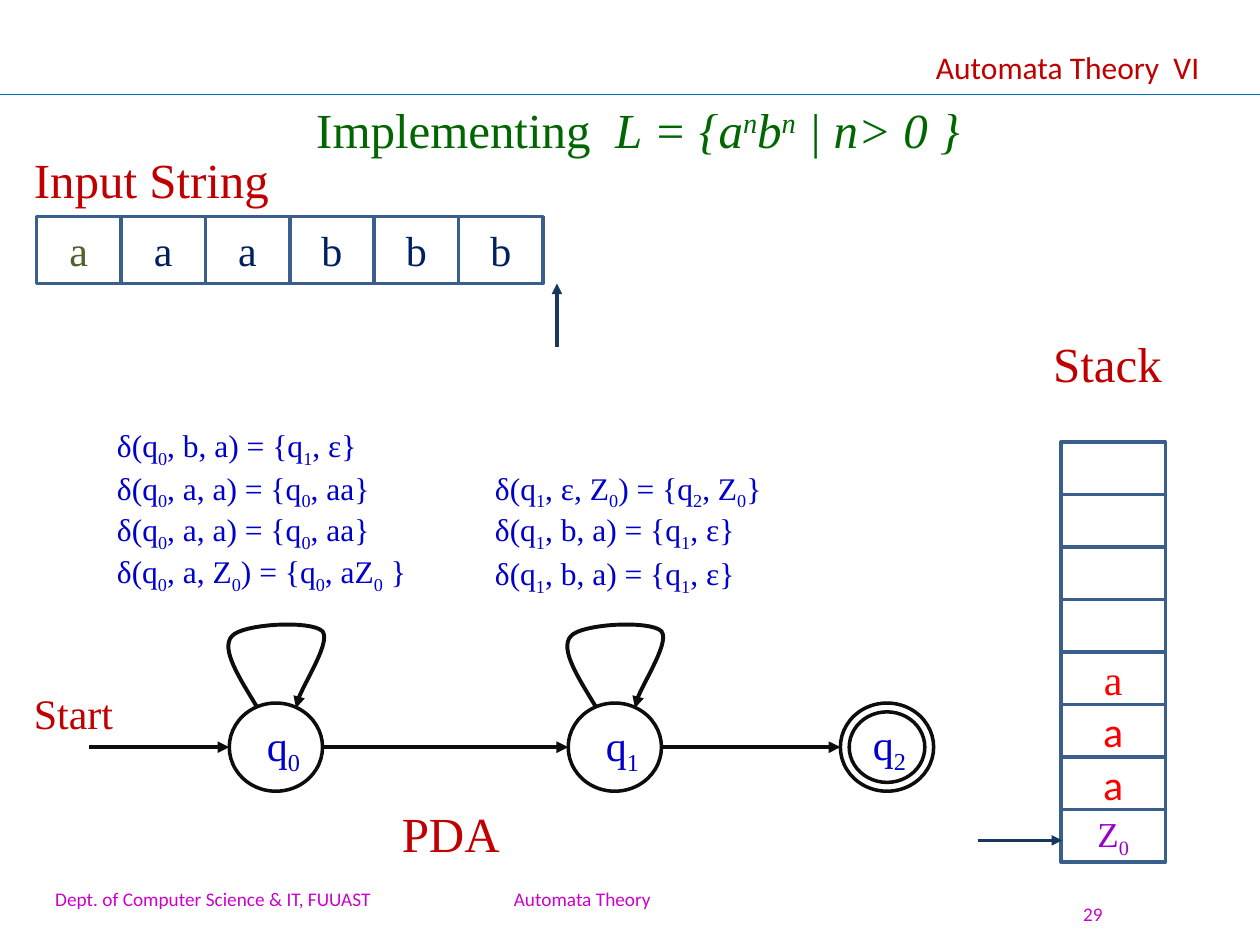
from pptx import Presentation
from pptx.dml.color import RGBColor
from pptx.enum.shapes import MSO_CONNECTOR, MSO_SHAPE
from pptx.enum.text import MSO_ANCHOR, PP_ALIGN
from pptx.oxml.ns import qn
from pptx.util import Inches, Pt
from lxml import etree

STRAIGHT = MSO_CONNECTOR.STRAIGHT
RECTANGLE, OVAL = MSO_SHAPE.RECTANGLE, MSO_SHAPE.OVAL
TOP, MIDDLE = MSO_ANCHOR.TOP, MSO_ANCHOR.MIDDLE
LEFT, CENTER, RIGHT = PP_ALIGN.LEFT, PP_ALIGN.CENTER, PP_ALIGN.RIGHT

THEME = {
    "serif": "Times New Roman", "sans": "Calibri",
    "heading": "C00000", "title": "006600", "footer": "CC00CC", "rule": "0070C0",
    "math": "0000CC", "cell": "002060", "first": "4F6228", "pushed": "FF0000",
    "bottom": "9900CC", "border": "3A5F8C", "pointer": "17375E", "ink": "0D0D0D",
    "white": "FFFFFF",
    "large": 28, "medium": 24, "symbol": 20, "small": 18, "tiny": 11,
}

# Markup: _ lowers and ^ raises the next character, * switches italics.
TITLE = "Implementing*  L = {a^nb^n | n> 0 }"
HEADINGS = [
    ("Automata Theory  VI", 7.33, 0.33, 2.32, 0.4, "small", "sans"),
    ("Stack", 8.26, 2.6, 1.07, 0.57, "large", "serif"),
    ("Input String", 0.17, 1.14, 2.09, 0.57, "large", "serif"),
    ("Start", 0.17, 5.41, 0.84, 0.51, "medium", "serif"),
    ("PDA", 3.09, 6.33, 0.99, 0.57, "large", "serif"),
]
FOOTERS = [
    ("Dept. of Computer Science & IT, FUUAST", 0.34, 6.92, 3.2, 0.42, LEFT),
    ("Automata Theory", 3.98, 6.92, 1.6, 0.42, LEFT),
    ("29", 8.3, 7.09, 0.55, 0.33, RIGHT),
]
TAPE = [("a", "first"), ("a", "cell"), ("a", "cell"),
        ("b", "cell"), ("b", "cell"), ("b", "cell")]
STACK = [("", "pushed", "medium", "serif")] * 4 + [
    ("a", "pushed", "medium", "serif"),
    ("a", "pushed", "medium", "sans"),
    ("a", "pushed", "medium", "sans"),
    ("Z_0", "bottom", "symbol", "serif"),
]
TRANSITIONS = [
    (0.83, 3.33, "δ(q_0, b, a) = {q_1, ε}", 2.22),
    (0.83, 3.67, "δ(q_0, a, a) = {q_0, aa}", 2.32),
    (0.83, 4.0, "δ(q_0, a, a) = {q_0, aa}", 2.32),
    (0.83, 4.33, "δ(q_0, a, Z_0) = {q_0, aZ_0 }", 2.63),
    (3.83, 3.67, "δ(q_1, ε, Z_0) = {q_2, Z_0}", 2.45),
    (3.83, 4.0, "δ(q_1, b, a) = {q_1, ε}", 2.3),
    (3.83, 4.35, "δ(q_1, b, a) = {q_1, ε}", 2.3),
]
STATES = [("q_0", 1.82, 0.2, 5.66), ("q_1", 4.51, 0.2, 5.66), ("q_2", 6.67, 0.16, 5.65)]
STATE_TOP, STATE_WIDTH, STATE_HEIGHT = 5.58, 0.74, 0.7
LOOP_START = (0.22, 5.61)
LOOP_CURVES = [
    ((0.08, 5.38), (-0.07, 5.15), (0.02, 5.05)),
    ((0.1, 4.95), (0.65, 4.92), (0.74, 5.01)),
    ((0.82, 5.11), (0.52, 5.52), (0.53, 5.62)),
]
CURVE_STEPS = 16


def color(name):
    return RGBColor.from_string(THEME[name])


def write(shape, markup, size, font, tint, align=LEFT, anchor=TOP, wrap=True):
    frame = shape.text_frame
    frame.word_wrap = wrap
    frame.vertical_anchor = anchor
    para = frame.paragraphs[0]
    para.alignment = align
    para.font.size = Pt(THEME[size])
    para.font.name = THEME[font]
    para.font.color.rgb = color(tint)
    pieces, italic, offset = [], False, 0
    for letter in markup:
        if letter == "*":
            italic = not italic
        elif letter in "_^":
            offset = -25000 if letter == "_" else 30000
        else:
            if pieces and not offset and pieces[-1][1:] == (italic, 0):
                pieces[-1] = (pieces[-1][0] + letter, italic, 0)
            else:
                pieces.append((letter, italic, offset))
            offset = 0
    for text, slanted, baseline in pieces:
        span = para.add_run()
        span.text = text
        if slanted:
            span.font.italic = True
        if baseline:
            span.font._element.set("baseline", str(baseline))


def add_label(page, markup, left, top, width, height, *style, **layout):
    box = page.shapes.add_textbox(*map(Inches, (left, top, width, height)))
    write(box, markup, *style, **layout)


def add_outline(page, kind, left, top, width, height, border, fill=None):
    shape = page.shapes.add_shape(kind, *map(Inches, (left, top, width, height)))
    shape.shadow.inherit = False
    if fill:
        shape.fill.solid()
        shape.fill.fore_color.rgb = color(fill)
    else:
        shape.fill.background()
    shape.line.color.rgb = color(border)
    shape.line.width = Pt(2)
    return shape


def style_line(shape, tint, weight, arrow=True):
    shape.line.color.rgb = color(tint)
    shape.line.width = Pt(weight)
    if arrow:
        tail = etree.SubElement(shape.line._get_or_add_ln(), qn("a:tailEnd"))
        tail.set("type", "triangle")


def add_line(page, start, end, tint, weight, arrow=True):
    line = page.shapes.add_connector(STRAIGHT, *map(Inches, start + end))
    style_line(line, tint, weight, arrow)
    etree.SubElement(line._element.spPr, qn("a:effectLst"))


def curve_points(start, curves):
    for first, second, end in curves:
        for step in range(1, CURVE_STEPS + 1):
            t = step / CURVE_STEPS
            u = 1 - t
            yield tuple(u**3 * a + 3 * u * u * t * b + 3 * u * t * t * c + t**3 * d
                        for a, b, c, d in zip(start, first, second, end))
        start = end


def add_loop(page, left):
    def place(point):
        return Inches(left + point[0]), Inches(point[1])

    builder = page.shapes.build_freeform(*place(LOOP_START))
    points = [place(point) for point in curve_points(LOOP_START, LOOP_CURVES)]
    builder.add_line_segments(points, close=False)
    loop = builder.convert_to_shape()
    loop.shadow.inherit = False
    loop.fill.background()
    style_line(loop, "ink", 2.25)


def add_automaton(page):
    middle = STATE_TOP + STATE_HEIGHT / 2
    arrow_start = 0.71
    for index, (name, left, indent, text_top) in enumerate(STATES):
        add_outline(page, OVAL, left, STATE_TOP, STATE_WIDTH, STATE_HEIGHT, "ink")
        if index < len(STATES) - 1:
            add_loop(page, left)
        else:
            add_outline(page, OVAL, left + 0.07, STATE_TOP + 0.07,
                        STATE_WIDTH - 0.14, STATE_HEIGHT - 0.14, "ink")
        add_label(page, name, left + indent, text_top, 0.48, 0.51,
                  "medium", "serif", "math", wrap=False)
        add_line(page, (arrow_start, middle), (left, middle), "ink", 2.25)
        arrow_start = left + STATE_WIDTH


def main():
    deck = Presentation()
    deck.slide_width, deck.slide_height = Inches(10), Inches(7.5)
    page = deck.slides.add_slide(deck.slide_layouts[5])

    title = page.shapes.title
    title.left, title.top, title.width, title.height = map(Inches, (2.41, 0.74, 5.4, 0.57))
    write(title, TITLE, "large", "serif", "title", wrap=False)

    add_line(page, (0, 0.75), (10, 0.75), "rule", 0.75, arrow=False)
    for text, left, top, width, height, size, font in HEADINGS:
        add_label(page, text, left, top, width, height, size, font, "heading", wrap=False)
    for text, left, top, width, height, align in FOOTERS:
        add_label(page, text, left, top, width, height, "tiny", "sans", "footer",
                  align=align, anchor=MIDDLE)

    for column, (letter, tint) in enumerate(TAPE):
        cell = add_outline(page, RECTANGLE, 0.29 + column * 0.67, 1.72, 0.67, 0.53, "border")
        write(cell, letter, "medium", "serif", tint, CENTER, MIDDLE)
    add_line(page, (4.42, 2.75), (4.42, 2.25), "pointer", 2)

    for row, (symbol, tint, size, font) in enumerate(STACK):
        cell = add_outline(page, RECTANGLE, 8.42, 3.51 + row * 5 / 12, 0.83, 5 / 12,
                           "border", "white")
        if symbol:
            write(cell, symbol, size, font, tint, CENTER, MIDDLE)
    add_line(page, (7.76, 6.67), (8.43, 6.67), "pointer", 2)

    add_automaton(page)
    for left, top, rule, width in TRANSITIONS:
        add_label(page, rule, left, top, width, 0.4, "small", "serif", "math", wrap=False)

    deck.save("out.pptx")


if __name__ == "__main__":
    main()
